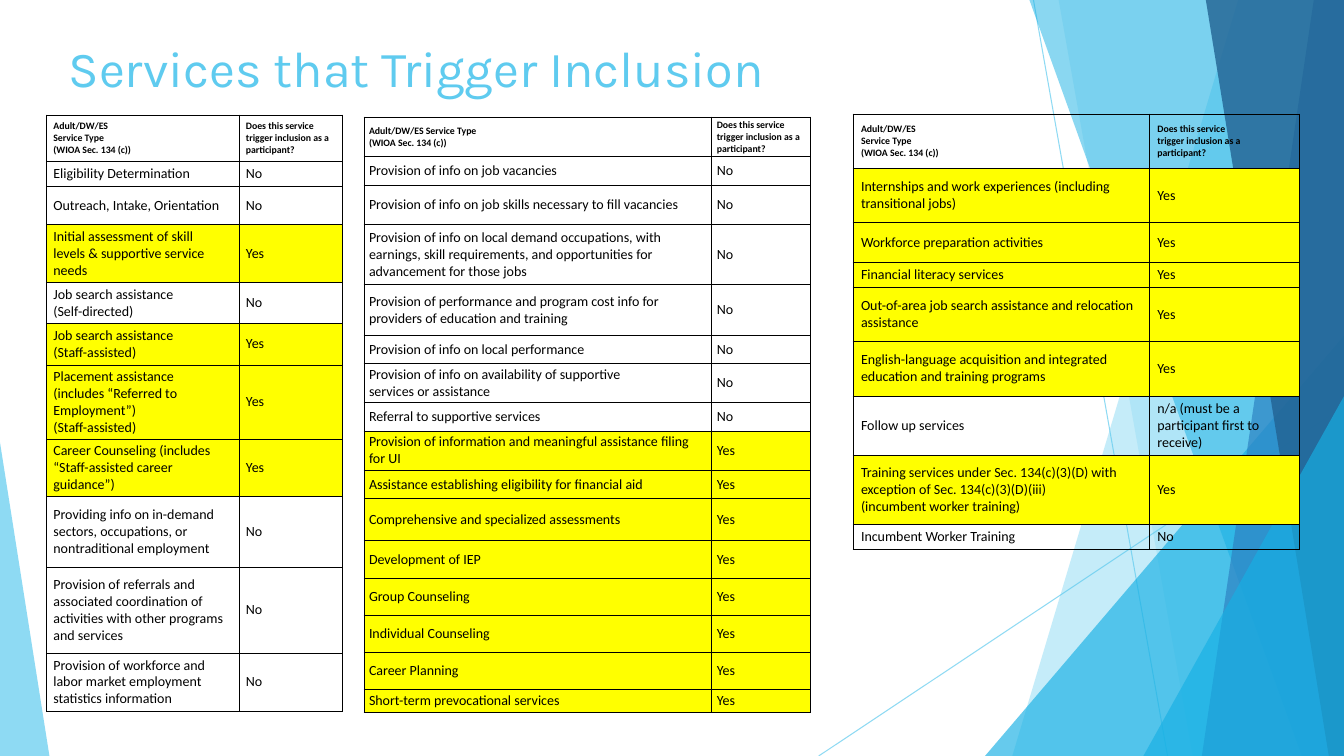
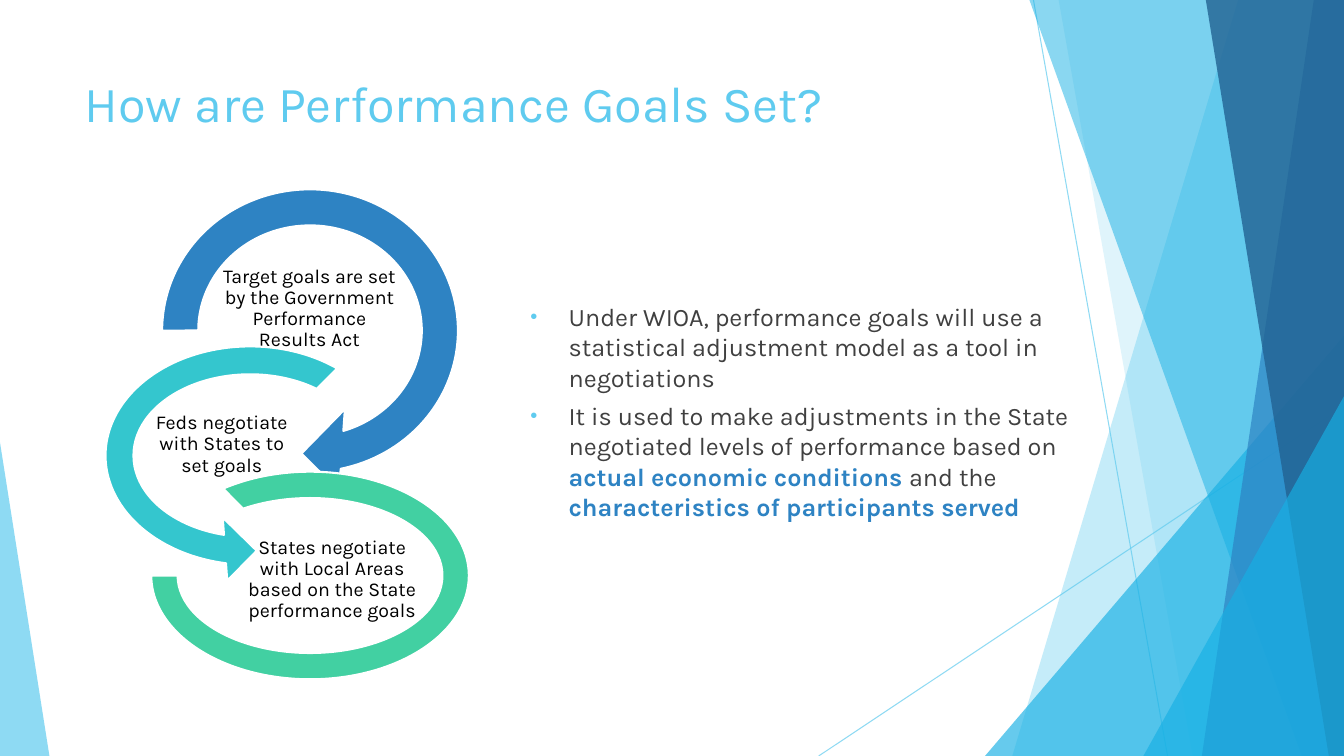
import copy

import lxml.etree
import pptx
import pptx.dml.color
import pptx.enum.shapes
import pptx.enum.text
import pptx.oxml.ns
import pptx.util

RGB = pptx.dml.color.RGBColor
SKY = RGB(0x5F, 0xCB, 0xEF)
CYAN = RGB(0x17, 0xB0, 0xE4)
BLUE = RGB(0x2E, 0x83, 0xC3)
NAVY = RGB(0x22, 0x62, 0x92)
TEAL = RGB(0x34, 0xC6, 0xCE)
GREEN = RGB(0x42, 0xD0, 0xA2)
YELLOW = RGB(0xFF, 0xFF, 0x00)
GREY = RGB(0x40, 0x40, 0x40)
BLACK = RGB(0, 0, 0)
WHITE = RGB(0xFF, 0xFF, 0xFF)

HEADING_FONT = "Karla"
TABLE_FONT = "Calibri"
WIDTH, HEIGHT = 13.33, 7.5

MSO = pptx.enum.shapes.MSO_SHAPE
ANCHOR = pptx.enum.text.MSO_ANCHOR
ALIGN = pptx.enum.text.PP_ALIGN
AUTOSIZE = pptx.enum.text.MSO_AUTO_SIZE
qn = pptx.oxml.ns.qn
Pt = pptx.util.Pt

TRIGGER = "Does this service\vtrigger inclusion as a\vparticipant?"
SERVICE_TYPE = "Adult/DW/ES\vService Type\v(WIOA Sec. 134 (c))"

BASIC_SERVICES = [
    (0.46, SERVICE_TYPE, TRIGGER),
    (0.25, "Eligibility Determination", "No"),
    (0.38, "Outreach, Intake, Orientation", "No"),
    (0.57, "Initial assessment of skill\vlevels & supportive service\vneeds", "Yes"),
    (0.41, "Job search assistance\v(Self-directed)", "No"),
    (0.41, "Job search assistance\v(Staff-assisted)", "Yes"),
    (0.73, "Placement assistance\v(includes “Referred to\vEmployment”)\v(Staff-assisted)", "Yes"),
    (0.57, "Career Counseling (includes\v“Staff-assisted career\vguidance”)", "Yes"),
    (0.7, "Providing info on in-demand\vsectors, occupations, or\vnontraditional employment", "No"),
    (0.86, "Provision of referrals and\vassociated coordination of\v"
           "activities with other programs\vand services", "No"),
    (0.57, "Provision of workforce and\vlabor market employment\vstatistics information", "No"),
]
INFORMATION_SERVICES = [
    (0.39, "Adult/DW/ES Service Type\v(WIOA Sec. 134 (c))", TRIGGER),
    (0.28, "Provision of info on job vacancies", "No"),
    (0.39, "Provision of info on job skills necessary to fill vacancies", "No"),
    (0.6, "Provision of info on local demand occupations, with earnings, skill requirements, "
          "and opportunities for advancement for those jobs", "No"),
    (0.5, "Provision of performance and program cost info for providers of education and training", "No"),
    (0.28, "Provision of info on local performance", "No"),
    (0.39, "Provision of info on availability of supportive\vservices or assistance", "No"),
    (0.28, "Referral to supportive services", "No"),
    (0.39, "Provision of information and meaningful assistance filing for UI", "Yes"),
    (0.28, "Assistance establishing eligibility for financial aid", "Yes"),
    (0.42, "Comprehensive and specialized assessments", "Yes"),
    (0.37, "Development of IEP", "Yes"),
    (0.37, "Group Counseling", "Yes"),
    (0.37, "Individual Counseling", "Yes"),
    (0.37, "Career Planning", "Yes"),
    (0.22, "Short-term prevocational services", "Yes"),
]
TRAINING_SERVICES = [
    (0.54, SERVICE_TYPE, TRIGGER),
    (0.54, "Internships and work experiences (including transitional jobs)", "Yes"),
    (0.39, "Workforce preparation activities", "Yes"),
    (0.24, "Financial literacy services", "Yes"),
    (0.54, "Out-of-area job search assistance and relocation\vassistance", "Yes"),
    (0.54, "English-language acquisition and integrated education and training programs", "Yes"),
    (0.54, "Follow up services", "n/a (must be a\vparticipant first to\vreceive)"),
    (0.69, "Training services under Sec. 134(c)(3)(D) with exception of "
           "Sec. 134(c)(3)(D)(iii)\v(incumbent worker training)", "Yes"),
    (0.24, "Incumbent Worker Training", "No"),
]
GOAL_STEPS = [
    (MSO.CIRCULAR_ARROW, (0.51, 0, 3.39, 3.26), (0.11, 11.42, 45, 108, 0.125), BLUE,
     (1.29, 1, 1.82, 0.82), "Target goals are set by the Government Performance Results Act"),
    (MSO.LEFT_CIRCULAR_ARROW, (0, 1.61, 3.22, 2.52), (0.11, 11.42, 63, 189, 0.125), TEAL,
     (0.57, 2.42, 1.52, 0.68), "Feds negotiate with States to set goals"),
    (MSO.BLOCK_ARC, (0.63, 3.03, 3.15, 2.06), (135, 108, 0.127), GREEN,
     (1.53, 3.72, 1.79, 0.76),
     "States negotiate with Local Areas based on the State performance goals"),
]
GOAL_POINTS = [
    [("Under WIOA, performance goals will use a statistical adjustment model "
      "as a tool in negotiations", False)],
    [("It is used to make adjustments in the State negotiated levels of performance based on ", False),
     ("actual economic conditions ", True),
     ("and the ", False),
     ("characteristics of participants served", True)],
]


def inches(*lengths):
    return [pptx.util.Inches(length) for length in lengths]


def style(run, size, font, colour, bold=False):
    run.font.size = Pt(size)
    run.font.name = font
    run.font.color.rgb = colour
    run.font.bold = bold


def fade(part, opacity):
    for colour in part.element.iter(qn("a:srgbClr")):
        lxml.etree.SubElement(colour, qn("a:alpha")).set("val", str(opacity * 1000))


def decorate_master(master, slide):
    backdrop = slide.shapes.add_group_shape()

    def paint(part, colour, opacity):
        part.shadow.inherit = False
        part.fill.solid()
        part.fill.fore_color.rgb = colour
        part.line.fill.background()
        fade(part, opacity)

    def ray(*ends):
        line = backdrop.shapes.add_connector(
            pptx.enum.shapes.MSO_CONNECTOR.STRAIGHT, *inches(*ends))
        line.line.color.rgb = SKY
        line.line.width = Pt(0.75)
        fade(line, 70)
        lxml.etree.SubElement(line.element.spPr, qn("a:effectLst"))

    def facet(top_left, bottom_left, colour, opacity):
        corners = [(top_left, 0), (WIDTH, 0), (WIDTH, HEIGHT), (bottom_left, HEIGHT)]
        outline = [inches(*corner) for corner in corners]
        builder = backdrop.shapes.build_freeform(*outline[0])
        builder.add_line_segments(outline[1:], close=True)
        paint(builder.convert_to_shape(), colour, opacity)

    def wedge(left, top, width, apex, colour, opacity):
        triangle = backdrop.shapes.add_shape(
            MSO.ISOSCELES_TRIANGLE, *inches(left, top, width, HEIGHT - top))
        triangle.adjustments[0] = apex
        paint(triangle, colour, opacity)

    ray(10.25, 0, 11.58, HEIGHT)
    ray(WIDTH, 4.03, 8.12, HEIGHT)
    facet(12.28, 10.04, SKY, 36)
    facet(10.5, 11.83, SKY, 20)
    wedge(9.77, 3.33, 3.56, 1, CYAN, 66)
    facet(10.21, 12.91, CYAN, 50)
    facet(13.03, 11.92, BLUE, 70)
    facet(11.96, 13.18, NAVY, 80)
    wedge(11.34, 3.93, 1.99, 1, CYAN, 66)
    wedge(0, 4.39, 0.49, 0, SKY, 70)

    for number, properties in enumerate(backdrop.element.iter(qn("p:cNvPr")), 100):
        properties.set("id", str(number))
    master.shapes.element.append(backdrop.element)


def place(part, box):
    part.left, part.top, part.width, part.height = inches(*box)


def add_title(slide, wording, box):
    title = slide.shapes.title
    place(title, box)
    frame = title.text_frame
    frame.text = wording
    frame.auto_size = AUTOSIZE.NONE
    frame.vertical_anchor = ANCHOR.TOP
    frame.paragraphs[0].alignment = ALIGN.LEFT
    style(frame.paragraphs[0].runs[0], 36, HEADING_FONT, SKY)


def add_borders(cell):
    properties = cell._tc.get_or_add_tcPr()
    for position, side in enumerate(("lnL", "lnR", "lnT", "lnB")):
        border = lxml.etree.Element(qn("a:" + side), w=str(Pt(0.5)))
        fill = lxml.etree.SubElement(border, qn("a:solidFill"))
        lxml.etree.SubElement(fill, qn("a:srgbClr")).set("val", str(BLACK))
        properties.insert(position, border)


def fill_cell(cell, wording, is_header, highlighted, side_inset, end_inset):
    cell.text_frame.text = wording
    cell.vertical_anchor = ANCHOR.MIDDLE
    cell.margin_left = cell.margin_right = pptx.util.Inches(side_inset)
    cell.margin_top = cell.margin_bottom = pptx.util.Inches(end_inset)
    for run in cell.text_frame.paragraphs[0].runs:
        style(run, 7 if is_header else 10, TABLE_FONT, BLACK, is_header)
    if highlighted:
        cell.fill.solid()
        cell.fill.fore_color.rgb = YELLOW
    else:
        cell.fill.background()
    add_borders(cell)


def add_services(slide, left, top, widths, insets, services):
    height = sum(service[0] for service in services)
    frame = slide.shapes.add_table(
        len(services), 2, *inches(left, top, sum(widths), height))
    table = frame.table
    table.first_row = table.horz_banding = False
    for column, width in zip(table.columns, widths):
        column.width = pptx.util.Inches(width)
    for index, (row_height, *wordings) in enumerate(services):
        table.rows[index].height = pptx.util.Inches(row_height)
        for cell, wording in zip(table.rows[index].cells, wordings):
            fill_cell(cell, wording, index == 0, wordings[-1] == "Yes", *insets)
    for line_break in frame.element.iter(qn("a:br")):
        line_break.append(copy.deepcopy(line_break.getprevious().find(qn("a:rPr"))))


def add_goal_cycle(slide, left, top):
    for outline, arc_box, adjustments, colour, label_box, wording in GOAL_STEPS:
        x, y, width, height = arc_box
        arc = slide.shapes.add_shape(outline, *inches(left + x, top + y, width, height))
        for index, value in enumerate(adjustments):
            arc.adjustments[index] = value
        arc.shadow.inherit = False
        arc.fill.solid()
        arc.fill.fore_color.rgb = colour
        arc.line.color.rgb = WHITE
        arc.line.width = Pt(1.5)

        x, y, width, height = label_box
        label = slide.shapes.add_textbox(*inches(left + x, top + y, width, height))
        frame = label.text_frame
        frame.word_wrap = True
        frame.vertical_anchor = ANCHOR.MIDDLE
        frame.margin_left = frame.margin_right = pptx.util.Inches(0.01)
        frame.margin_top = frame.margin_bottom = pptx.util.Inches(0.01)
        frame.text = wording
        frame.paragraphs[0].alignment = ALIGN.CENTER
        frame.paragraphs[0].line_spacing = 0.9
        style(frame.paragraphs[0].runs[0], 14, HEADING_FONT, BLACK)


def add_bullet(paragraph):
    properties = paragraph._p.get_or_add_pPr()
    properties.set("marL", str(pptx.util.Inches(0.38)))
    properties.set("indent", str(pptx.util.Inches(-0.38)))
    tint = lxml.etree.SubElement(properties, qn("a:buClr"))
    lxml.etree.SubElement(tint, qn("a:srgbClr")).set("val", str(SKY))
    lxml.etree.SubElement(properties, qn("a:buSzPct")).set("val", "80000")
    lxml.etree.SubElement(properties, qn("a:buFont")).set("typeface", "Arial")
    lxml.etree.SubElement(properties, qn("a:buChar")).set("char", "•")


def add_goal_points(slide, box):
    body = slide.placeholders[1]
    place(body, box)
    frame = body.text_frame
    frame.auto_size = AUTOSIZE.NONE
    frame.vertical_anchor = ANCHOR.TOP
    for index, phrases in enumerate(GOAL_POINTS):
        paragraph = frame.add_paragraph() if index else frame.paragraphs[0]
        add_bullet(paragraph)
        paragraph.space_before = Pt(0)
        paragraph.space_after = Pt(6)
        for wording, emphasised in phrases:
            run = paragraph.add_run()
            run.text = wording
            style(run, 18, HEADING_FONT, BLUE if emphasised else GREY, emphasised)


def main():
    deck = pptx.Presentation()
    deck.slide_width, deck.slide_height = inches(WIDTH, HEIGHT)

    inclusion = deck.slides.add_slide(deck.slide_layouts[5])
    decorate_master(deck.slide_master, inclusion)
    add_title(inclusion, "Services that Trigger Inclusion", (0.58, 0.32, 9.4, 1.44))
    add_services(inclusion, 0.46, 1.14, (1.91, 1.03), (0.07, 0.03), BASIC_SERVICES)
    add_services(inclusion, 3.61, 1.16, (3.45, 0.98), (0.05, 0.02), INFORMATION_SERVICES)
    add_services(inclusion, 8.46, 1.13, (2.94, 1.49), (0.08, 0.04), TRAINING_SERVICES)

    goals = deck.slides.add_slide(deck.slide_layouts[1])
    add_title(goals, "How are Performance Goals Set?", (0.74, 0.67, 9.4, 0.81))
    add_goal_points(goals, (5.16, 2.94, 6.02, 2.54))
    add_goal_cycle(goals, 0.87, 1.65)

    deck.save("out.pptx")


if __name__ == "__main__":
    main()
